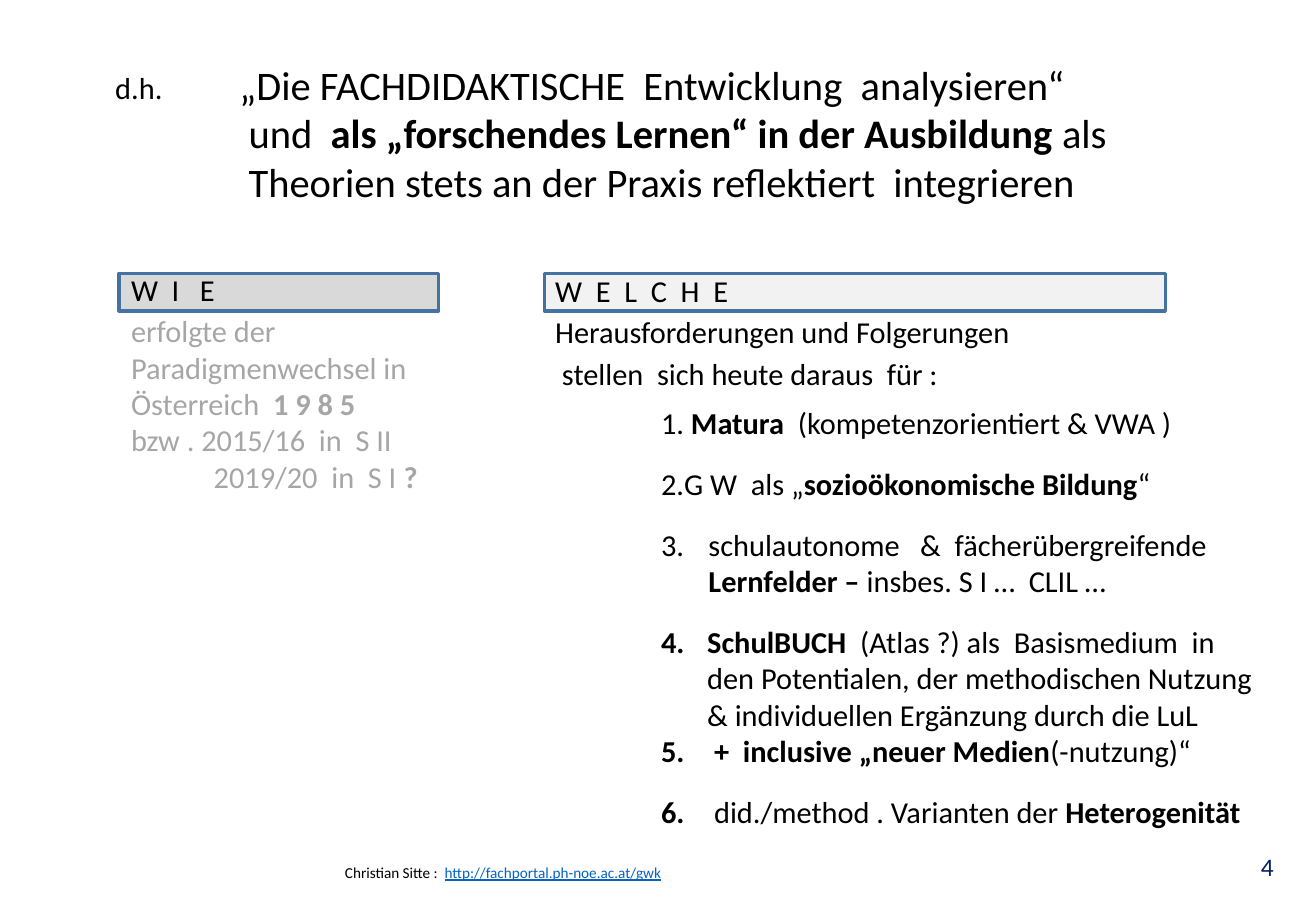
from pptx import Presentation
from pptx.dml.color import RGBColor
from pptx.enum.shapes import MSO_SHAPE as Shape
from pptx.enum.text import MSO_ANCHOR as Anchor, MSO_AUTO_SIZE as AutoSize, PP_ALIGN as Align
from pptx.oxml.xmlchemy import OxmlElement
from pptx.util import Inches, Pt

FONT = "Calibri"
BLACK = RGBColor(0x00, 0x00, 0x00)
GREY = RGBColor(0xA6, 0xA6, 0xA6)
NAVY = RGBColor(0x00, 0x20, 0x60)
LINK = RGBColor(0x05, 0x63, 0xC1)
BORDER = RGBColor(0x43, 0x73, 0x9E)
WIE_FILL = RGBColor(0xD9, 0xD9, 0xD9)
WELCHE_FILL = RGBColor(0xF2, 0xF2, 0xF2)

TITLE_LINES = [
    "„Die FACHDIDAKTISCHE  Entwicklung  analysieren“",
    " und  *als „forschendes Lernen“ in der Ausbildung *als",
    " Theorien stets an der Praxis reflektiert  integrieren",
]
CHALLENGES = [
    (" *Matura*  (kompetenzorientiert & VWA )", 0.14, 0),
    ("G W  als „*sozioökonomische Bildung*“", 0.14, 14.4),
    ("schulautonome   &  fächerübergreifende *Lernfelder – *insbes. S I …  CLIL …", 0.39, 14.4),
    ("*SchulBUCH  *(Atlas ?) als  Basismedium  in den Potentialen, der methodischen "
     "Nutzung   & individuellen Ergänzung durch die LuL", 0.38, 14.4),
    ("* +  inclusive „neuer Medien*(-nutzung)“", 0.38, 0),
    ("* *did./method . Varianten der* Heterogenität*", 0.38, 14.4),
]


def place(shape, left, top, width, height):
    shape.left, shape.top = Inches(left), Inches(top)
    shape.width, shape.height = Inches(width), Inches(height)
    frame = shape.text_frame
    frame.word_wrap = True
    frame.auto_size = AutoSize.NONE
    frame.vertical_anchor = Anchor.TOP
    return frame


def add_text_box(slide, left, top, width, height):
    return place(slide.shapes.add_textbox(0, 0, 0, 0), left, top, width, height)


def add_run(paragraph, text, size=18, color=BLACK, bold=False, underline=False):
    run = paragraph.add_run()
    run.text = text
    font = run.font
    font.name, font.size, font.bold = FONT, Pt(size), bold
    font.underline = underline
    font.color.rgb = color


def add_paragraph(frame, text, size=18, color=BLACK, align=Align.LEFT,
                  before=0, indent=0, numbered=False):
    first = frame.paragraphs[0]
    paragraph = frame.add_paragraph() if first.runs else first
    paragraph.alignment = align
    paragraph.space_before = Pt(before)
    paragraph.line_spacing = 1.0
    properties = paragraph._p.get_or_add_pPr()
    properties.set("marL", str(Inches(indent)))
    properties.set("indent", str(-Inches(indent) if numbered else 0))
    bullet = OxmlElement("a:buAutoNum" if numbered else "a:buNone")
    if numbered:
        bullet.set("type", "arabicPeriod")
    properties.append(bullet)
    for position, part in enumerate(text.split("*")):
        if part:
            add_run(paragraph, part, size, color, bold=position % 2 == 1)
    return paragraph


def add_bar(slide, left, width, fill):
    bar = slide.shapes.add_shape(
        Shape.RECTANGLE, Inches(left), Inches(2.25), Inches(width), Inches(0.31))
    bar.shadow.inherit = False
    bar.fill.solid()
    bar.fill.fore_color.rgb = fill
    bar.line.color.rgb = BORDER
    bar.line.width = Pt(2)


def main():
    presentation = Presentation()
    presentation.slide_width, presentation.slide_height = Inches(10.83), Inches(7.5)
    slide = presentation.slides.add_slide(presentation.slide_layouts[1])

    add_bar(slide, 4.48, 5.11, WELCHE_FILL)
    add_bar(slide, 0.98, 2.63, WIE_FILL)

    title = place(slide.shapes.title, 1.87, 0.44, 7.8, 1.72)
    for line in TITLE_LINES:
        add_paragraph(title, line, size=24)
    add_paragraph(add_text_box(slide, 0.85, 0.52, 0.72, 0.4), "d.h.")

    how = add_text_box(slide, 0.98, 2.18, 2.71, 2.26)
    add_paragraph(how, "W  I   E")
    add_paragraph(how, "erfolgte der Paradigmenwechsel in Österreich  *1 9 8 5*",
                  color=GREY, before=3)
    add_paragraph(how, "bzw . 2015/16  in  S II", color=GREY)
    add_paragraph(how, "2019/20  in  S I *?*", color=GREY, indent=0.68)

    which = add_text_box(slide, 4.47, 2.19, 4.95, 1.09)
    add_paragraph(which, "W  E  L  C  H  E")
    add_paragraph(which, "Herausforderungen und Folgerungen", before=3)
    add_paragraph(which, " stellen  sich heute daraus  für :", before=3)

    challenges = place(slide.placeholders[1], 5.34, 3.28, 5.2, 3.63)
    for text, indent, before in CHALLENGES:
        add_paragraph(challenges, text, before=before, indent=indent, numbered=True)

    footer = add_text_box(slide, 2.74, 7.06, 5.75, 0.25)
    credit = add_paragraph(footer, "Christian Sitte :  ", size=9)
    add_run(credit, "http://fachportal.ph-noe.ac.at/gwk", size=9, color=LINK, underline=True)
    number = add_text_box(slide, 7.62, 6.96, 2.96, 0.35)
    add_paragraph(number, "4", size=15, color=NAVY, align=Align.RIGHT)

    presentation.save("out.pptx")


if __name__ == "__main__":
    main()
